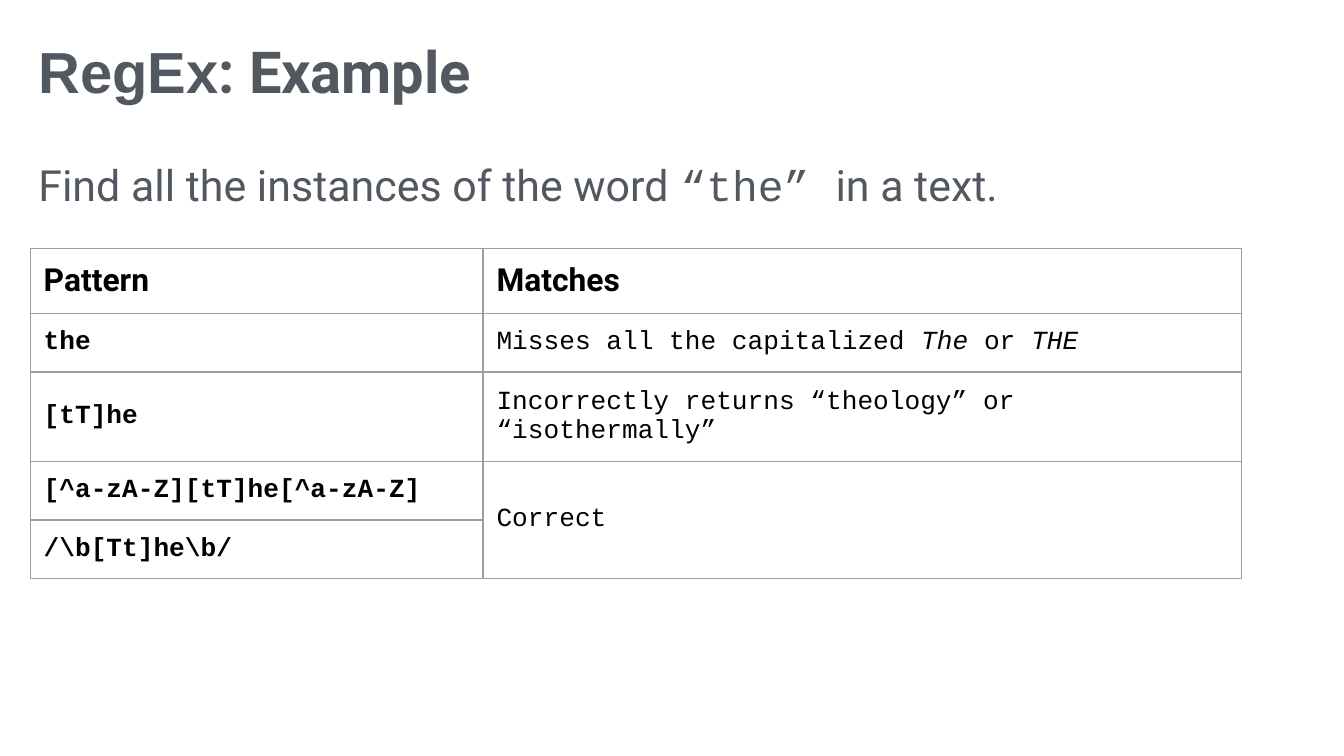
"""Build the slide on a regular expression for the word "the"."""
from lxml import etree
from pptx import Presentation
from pptx.dml.color import RGBColor
from pptx.enum.text import MSO_ANCHOR
from pptx.oxml.ns import qn
from pptx.util import Pt

TOP, MIDDLE = MSO_ANCHOR.TOP, MSO_ANCHOR.MIDDLE
SANS, MONO = "Roboto", "Courier New"
SLATE, BLACK, GRAY = "525860", "000000", "9E9E9E"


def add_runs(para, runs, size, color):
    for text, font_name, bold, italic in runs:
        span = para.add_run()
        span.text = text
        span.font.name = font_name
        span.font.size = Pt(size)
        span.font.bold = bold
        span.font.italic = italic
        span.font.color.rgb = RGBColor.from_string(color)


def set_borders(cell, color, width):
    properties = cell._tc.get_or_add_tcPr()
    for side in ("lnL", "lnR", "lnT", "lnB"):
        line = etree.SubElement(properties, qn(f"a:{side}"), w=str(Pt(width)))
        fill = etree.SubElement(line, qn("a:solidFill"))
        etree.SubElement(fill, qn("a:srgbClr"), val=color)


deck = Presentation()
deck.slide_width, deck.slide_height = Pt(720), Pt(405)
page = deck.slides.add_slide(deck.slide_layouts[6])

title = [("RegEx", "Arial", True, False), (": Example", SANS, True, False)]
task = [
    ("Find all the instances of the word ", SANS, False, False),
    ("“the” ", MONO, False, False),
    ("in a text.", SANS, False, False),
]
for top, width, height, size, spacing, runs in (
    (14.4, 686, 35.3, 31, 1, title),
    (76.3, 673, 283, 23, 1.15, task),
):
    box = page.shapes.add_textbox(Pt(16), Pt(top), Pt(width), Pt(height))
    frame = box.text_frame
    frame.word_wrap = True
    frame.vertical_anchor = TOP
    frame.margin_left = frame.margin_right = Pt(4.6)
    frame.margin_top = frame.margin_bottom = Pt(4.6)
    frame.paragraphs[0].line_spacing = spacing
    add_runs(frame.paragraphs[0], runs, size, SLATE)

rows = [
    ("Pattern", [("Matches", False)]),
    ("the", [("Misses all the capitalized ", False), ("The", True),
             (" or ", False), ("THE", True)]),
    ("[tT]he", [("Incorrectly returns “theology” or “isothermally”", False)]),
    ("[^a-zA-Z][tT]he[^a-zA-Z]", [("Correct", False)]),
    ("/\\b[Tt]he\\b/", []),
]
heights = [34.6, 31, 46, 31, 31]
widths = [242.6, 406.1]
table = page.shapes.add_table(
    len(rows), len(widths), Pt(16.2), Pt(133.2), Pt(sum(widths)), Pt(sum(heights))
).table
table.first_row = table.horz_banding = False
for column, width in zip(table.columns, widths):
    column.width = Pt(width)

for index, (pattern, matches) in enumerate(rows):
    table.rows[index].height = Pt(heights[index])
    header = index == 0
    font_name, size = (SANS, 17) if header else (MONO, 14)
    for column, pieces in enumerate(([(pattern, False)], matches)):
        cell = table.cell(index, column)
        cell.margin_left = cell.margin_right = Pt(7.2)
        cell.margin_top = cell.margin_bottom = Pt(7.2)
        cell.vertical_anchor = TOP if header else MIDDLE
        set_borders(cell, GRAY, 0.75)
        cell.fill.background()
        bold = header or column == 0
        runs = [(text, font_name, bold, italic) for text, italic in pieces]
        add_runs(cell.text_frame.paragraphs[0], runs, size, BLACK)
table.cell(3, 1).merge(table.cell(4, 1))

deck.save("out.pptx")
